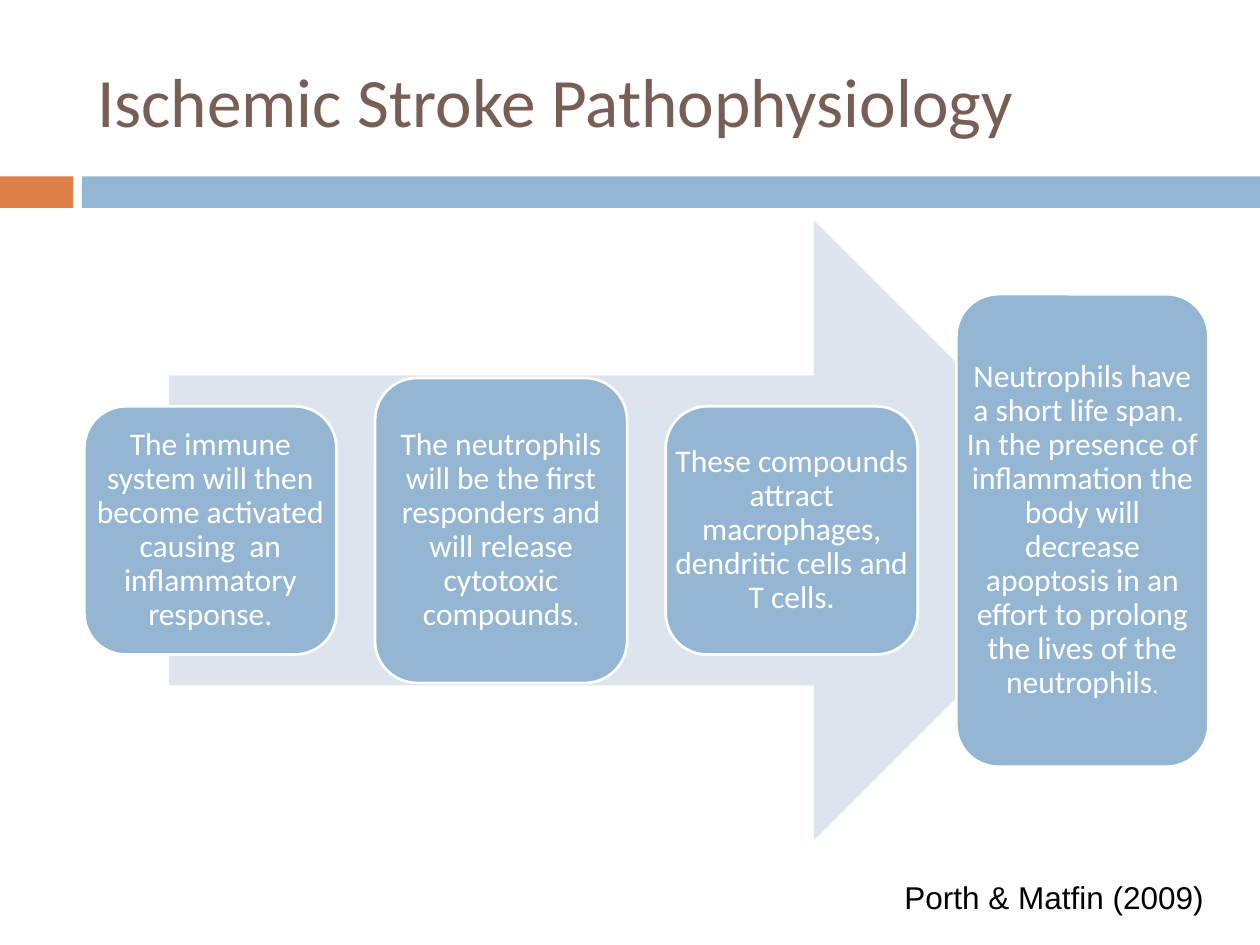
from pptx import Presentation
from pptx.dml.color import RGBColor
from pptx.enum.shapes import MSO_SHAPE
from pptx.enum.text import MSO_ANCHOR, MSO_AUTO_SIZE, PP_ALIGN
from pptx.util import Inches, Pt

COLORS = {
    "title": "775F55",
    "accent": "DD8047",
    "blue": "94B6D2",
    "arrow": "DCE5EE",
    "white": "FFFFFF",
    "black": "000000",
}

# Step text, size of its closing full stop, box height
STEPS = [
    ("The immune system will then become activated causing  an inflammatory response", 18, 1.97),
    ("The neutrophils will be the first responders and will release cytotoxic compounds", 14, 2.42),
    ("These compounds attract macrophages, dendritic cells and T cells", 18, 1.97),
    ("Neutrophils have a short life span.  In the presence of inflammation the body will "
     "decrease apoptosis in an effort to prolong the lives of the neutrophils", 14, 3.75),
]
STEP_LEFT, STEP_WIDTH, STEP_PITCH = 0.67, 2, 2.307
FLOW_MIDDLE = 4.21


def rgb(name):
    return RGBColor.from_string(COLORS[name])


def inches(*lengths):
    return [Inches(length) for length in lengths]


def style_run(run, size, color, font="Calibri"):
    run.font.name = font
    run.font.size = Pt(size)
    run.font.color.rgb = rgb(color)


def add_filled(slide, preset, box, fill, outline=None):
    shape = slide.shapes.add_shape(preset, *inches(*box))
    shape.shadow.inherit = False
    shape.fill.solid()
    shape.fill.fore_color.rgb = rgb(fill)
    if outline:
        shape.line.color.rgb = rgb(outline)
        shape.line.width = Pt(1.5)
    else:
        shape.line.fill.background()


def set_title(slide, text):
    title = slide.shapes.title
    title.left, title.top, title.width, title.height = inches(0.67, 0.25, 8.92, 1.08)
    frame = title.text_frame
    frame.text = text
    frame.auto_size = MSO_AUTO_SIZE.NONE
    frame.vertical_anchor = MSO_ANCHOR.MIDDLE
    paragraph = frame.paragraphs[0]
    paragraph.alignment = PP_ALIGN.LEFT
    style_run(paragraph.runs[0], 39.6, "title")


def add_step(slide, index, text, stop_size, height):
    """Draw a rounded box with a full-width label that ignores the corner inset."""
    box = (STEP_LEFT + index * STEP_PITCH, FLOW_MIDDLE - height / 2, STEP_WIDTH, height)
    add_filled(slide, MSO_SHAPE.ROUNDED_RECTANGLE, box, "blue", "white")

    frame = slide.shapes.add_textbox(*inches(*box)).text_frame
    frame.word_wrap = True
    frame.vertical_anchor = MSO_ANCHOR.MIDDLE
    frame.margin_left = frame.margin_right = Inches(0.07)
    frame.margin_top = frame.margin_bottom = Inches(0.07)
    paragraph = frame.paragraphs[0]
    paragraph.text = text
    paragraph.alignment = PP_ALIGN.CENTER
    paragraph.line_spacing = 0.9
    style_run(paragraph.runs[0], 18, "white")
    full_stop = paragraph.add_run()
    full_stop.text = "."
    style_run(full_stop, stop_size, "white")


def add_citation(slide, text):
    frame = slide.shapes.add_textbox(*inches(7.08, 6.92, 2.92, 0.4)).text_frame
    frame.word_wrap = True
    frame.auto_size = MSO_AUTO_SIZE.SHAPE_TO_FIT_TEXT
    frame.text = text
    style_run(frame.paragraphs[0].runs[0], 18, "black", "Arial")


def main():
    presentation = Presentation()
    presentation.slide_width, presentation.slide_height = inches(10, 7.5)
    slide = presentation.slides.add_slide(presentation.slide_layouts[5])

    add_filled(slide, MSO_SHAPE.RECTANGLE, (0, 1.4, 0.58, 0.25), "accent")
    add_filled(slide, MSO_SHAPE.RECTANGLE, (0.65, 1.4, 9.35, 0.25), "blue")
    set_title(slide, "Ischemic Stroke Pathophysiology")
    add_filled(slide, MSO_SHAPE.RIGHT_ARROW, (1.34, 1.75, 7.58, 4.92), "arrow")
    for index, step in enumerate(STEPS):
        add_step(slide, index, *step)
    add_citation(slide, "Porth & Matfin (2009)")

    presentation.save("out.pptx")


if __name__ == "__main__":
    main()
